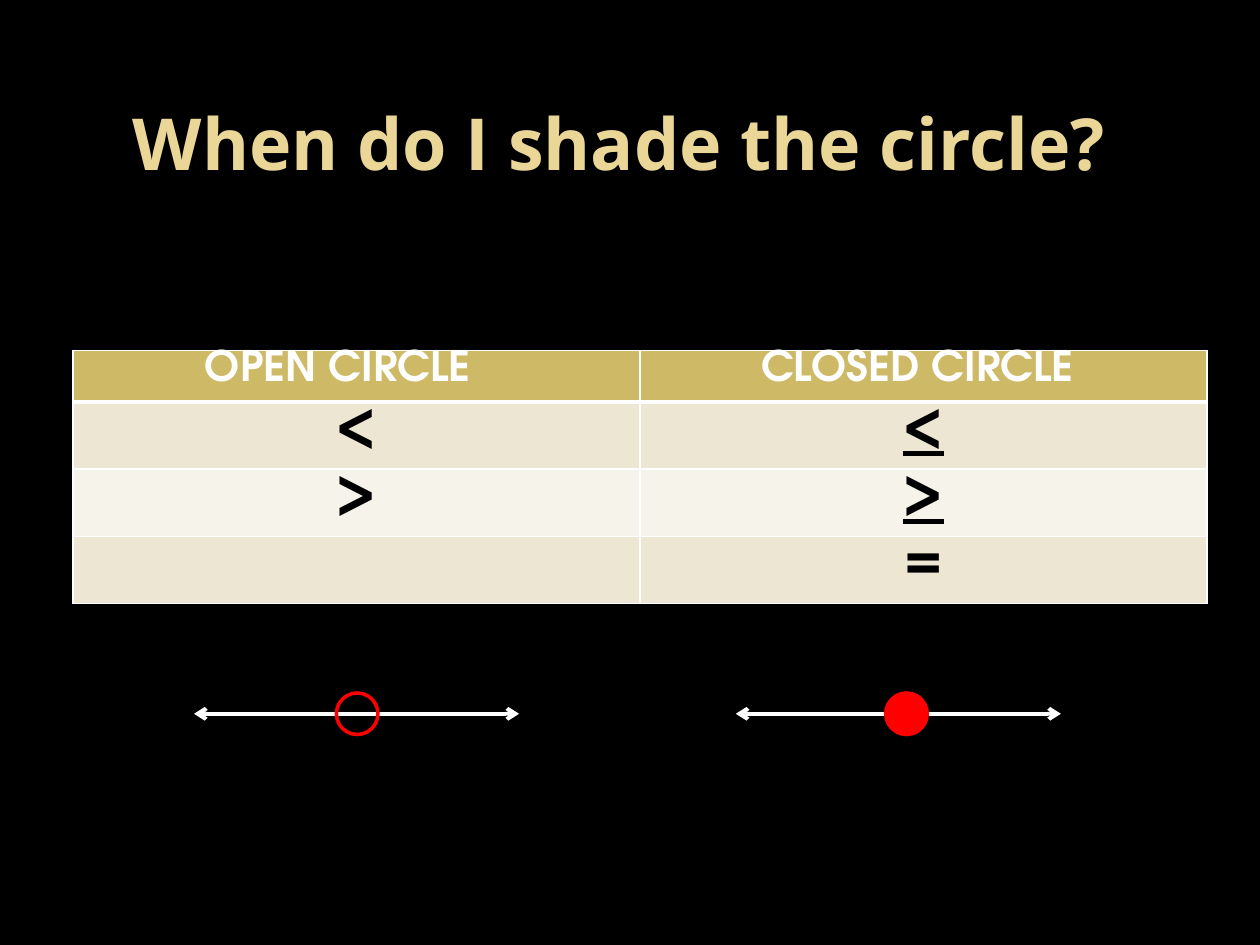
from lxml import etree
from pptx import Presentation
from pptx.dml.color import RGBColor
from pptx.enum.shapes import MSO_CONNECTOR, MSO_SHAPE
from pptx.enum.text import MSO_ANCHOR, PP_ALIGN
from pptx.oxml.ns import qn
from pptx.util import Inches, Pt

CENTER = PP_ALIGN.CENTER
MIDDLE = MSO_ANCHOR.MIDDLE
STRAIGHT = MSO_CONNECTOR.STRAIGHT
OVAL = MSO_SHAPE.OVAL

TITLE_FONT, TABLE_FONT = "Open Sans", "TeX Gyre Adventor"
BLACK, WHITE, RED = "000000", "FFFFFF", "FF0000"
TITLE_COLOR, HEADER_FILL = "EAD696", "CEB966"
BAND_FILLS = ["EDE6D3", "F6F3EA"]

# text, underlined
HEADERS = ["OPEN CIRCLE", "CLOSED CIRCLE"]
HEADER_RIGHT_MARGINS = [0.4, 0.2]
SYMBOL_ROWS = [
    [("<", False), ("<", True)],
    [(">", False), (">", True)],
    [("", False), ("=", False)],
]


def rgb(value):
    return RGBColor.from_string(value)


def write(tf, text, color, **font):
    p = tf.paragraphs[0]
    p.alignment = CENTER
    if not text:
        return
    r = p.add_run()
    r.text = text
    r.font.color.rgb = rgb(color)
    for name, value in font.items():
        setattr(r.font, name, value)


def add_title(s, left, top, width, height):
    box = s.shapes.add_textbox(Inches(left), Inches(top), Inches(width), Inches(height))
    tf = box.text_frame
    tf.word_wrap = True
    tf.vertical_anchor = MIDDLE
    write(tf, "When do I shade the circle?", TITLE_COLOR,
          name=TITLE_FONT, size=Pt(41), bold=True)


def set_borders(cell, **widths):
    """Draw white borders; widths are points by side (L, R, T, B)."""
    tc_pr = cell._tc.get_or_add_tcPr()
    for side, width in widths.items():
        ln = etree.SubElement(tc_pr, qn(f"a:ln{side}"), w=str(Pt(width)))
        fill = etree.SubElement(ln, qn("a:solidFill"))
        etree.SubElement(fill, qn("a:srgbClr"), val=WHITE)


def format_cell(cell, fill, top=1, bottom=1):
    cell.margin_top = cell.margin_bottom = 0
    set_borders(cell, L=1, R=1, T=top, B=bottom)
    cell.fill.solid()
    cell.fill.fore_color.rgb = rgb(fill)


def add_symbol_table(s, left, top, width, header_height, row_height):
    rows = len(SYMBOL_ROWS) + 1
    height = header_height + row_height * len(SYMBOL_ROWS)
    table = s.shapes.add_table(rows, len(HEADERS), Inches(left), Inches(top),
                               Inches(width), Inches(height)).table
    for i, row in enumerate(table.rows):
        row.height = Inches(row_height if i else header_height)

    for col, (text, margin) in enumerate(zip(HEADERS, HEADER_RIGHT_MARGINS)):
        cell = table.cell(0, col)
        format_cell(cell, HEADER_FILL, bottom=3)
        cell.margin_right = Inches(margin)
        write(cell.text_frame, text, WHITE, name=TABLE_FONT, size=Pt(24), bold=True)

    for i, symbols in enumerate(SYMBOL_ROWS):
        for col, (text, underline) in enumerate(symbols):
            cell = table.cell(i + 1, col)
            format_cell(cell, BAND_FILLS[i % 2], top=1 if i else 3)
            write(cell.text_frame, text, BLACK, name=TABLE_FONT, size=Pt(32),
                  bold=True, underline=underline)


def add_number_line(s, left, top, width, size, circle_left, closed):
    """Group a double-headed line with a circle that sits on it."""
    group = s.shapes.add_group_shape()
    y = Inches(top + size / 2)
    line = group.shapes.add_connector(STRAIGHT, Inches(left), y, Inches(left + width), y)
    line.line.color.rgb = rgb(WHITE)
    line.line.width = Pt(2.25)
    ln = line.line._get_or_add_ln()
    for end in ("a:headEnd", "a:tailEnd"):
        etree.SubElement(ln, qn(end), type="arrow")
    etree.SubElement(line._element.spPr, qn("a:effectLst"))

    circle = group.shapes.add_shape(OVAL, Inches(circle_left), Inches(top),
                                    Inches(size), Inches(size))
    circle.shadow.inherit = False
    circle.line.color.rgb = rgb(RED)
    circle.line.width = Pt(2)
    if closed:
        circle.fill.solid()
        circle.fill.fore_color.rgb = rgb(RED)
    else:
        circle.fill.background()


def main():
    prs = Presentation()
    prs.slide_width, prs.slide_height = Inches(10), Inches(7.5)
    s = prs.slides.add_slide(prs.slide_layouts[6])
    s.background.fill.solid()
    s.background.fill.fore_color.rgb = rgb(BLACK)

    add_title(s, 0.42, 0.5, 9, 1.25)
    add_symbol_table(s, 0.58, 2.78, 9, 0.41, 0.51)
    add_number_line(s, 5.84, 5.5, 2.58, 0.33, circle_left=7.03, closed=True)
    add_number_line(s, 1.54, 5.5, 2.58, 0.33, circle_left=2.67, closed=False)
    prs.save("out.pptx")


if __name__ == "__main__":
    main()
